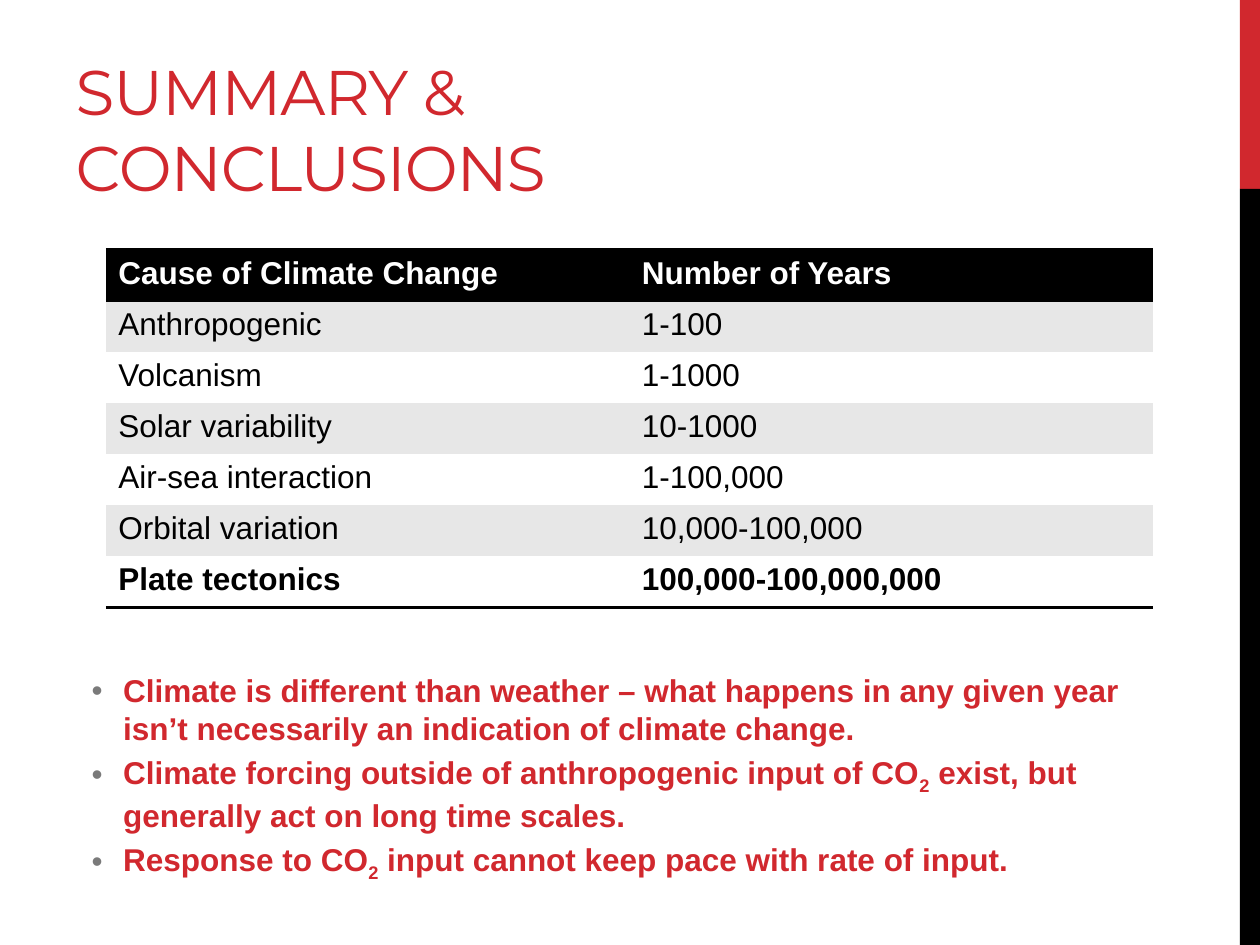
"""Build the summary slide on causes of climate change."""
from lxml.etree import SubElement
from pptx import Presentation
from pptx.dml.color import RGBColor
from pptx.enum.shapes import MSO_SHAPE
from pptx.enum.text import MSO_ANCHOR, MSO_AUTO_SIZE, PP_ALIGN
from pptx.oxml import parse_xml
from pptx.oxml.ns import nsdecls, qn
from pptx.util import Inches, Pt

RED, BLACK, WHITE, BAND, GREY = "D1282E", "000000", "FFFFFF", "E7E7E7", "7A7A7A"

ROWS = [
    ("Cause of Climate Change", "Number of Years"),
    ("Anthropogenic", "1-100"),
    ("Volcanism", "1-1000"),
    ("Solar variability", "10-1000"),
    ("Air-sea interaction", "1-100,000"),
    ("Orbital variation", "10,000-100,000"),
    ("Plate tectonics", "100,000-100,000,000"),
]

BULLETS = [
    ["Climate is different than weather – what happens in any given year "
     "isn’t necessarily an indication of climate change."],
    ["Climate forcing outside of anthropogenic input of CO", "2",
     " exist, but generally act on long time scales."],
    ["Response to CO", "2", " input cannot keep pace with rate of input."],
]


def rgb(value):
    return RGBColor.from_string(value)


def box(*lengths):
    return [Inches(length) for length in lengths]


def add_text(p, text, size=18, font="Arial", color=BLACK, bold=False,
             baseline=0, spacing=0):
    r = p.add_run()
    r.text = text
    r.font.size, r.font.name, r.font.bold = Pt(size), font, bold
    r.font.color.rgb = rgb(color)
    rPr = r._r.get_or_add_rPr()
    if baseline:
        rPr.set("baseline", str(baseline * 1000))
    if spacing:
        rPr.set("spc", str(round(spacing * 100)))


def set_borders(cell, sides):
    tcPr = cell._tc.get_or_add_tcPr()
    for i, side in enumerate("LRTB"):
        fill = "<a:noFill/>"
        if side in sides:
            fill = f'<a:solidFill><a:srgbClr val="{BLACK}"/></a:solidFill>'
        tcPr.insert(i, parse_xml(
            f'<a:ln{side} {nsdecls("a")} w="{Pt(2)}">{fill}</a:ln{side}>'))


class SlideBuilder:
    def __init__(self, prs):
        self.s = prs.slides.add_slide(prs.slide_layouts[5])
        self.s.background.fill.solid()
        self.s.background.fill.fore_color.rgb = rgb(WHITE)

    def bar(self, left, top, width, height, color):
        sp = self.s.shapes.add_shape(
            MSO_SHAPE.RECTANGLE, *box(left, top, width, height))
        sp.shadow.inherit = False
        sp.fill.solid()
        sp.fill.fore_color.rgb = rgb(color)
        sp.line.fill.background()

    def title(self, text, left, top, width, height):
        sp = self.s.shapes.title
        sp.left, sp.top, sp.width, sp.height = box(left, top, width, height)
        tf = sp.text_frame
        tf.word_wrap = True
        tf.auto_size = MSO_AUTO_SIZE.NONE
        tf.vertical_anchor = MSO_ANCHOR.BOTTOM
        p = tf.paragraphs[0]
        p.alignment = PP_ALIGN.LEFT
        add_text(p, text, size=36, font="Montserrat", color=RED, spacing=-0.6)

    def table(self, rows, left, top, width, height):
        table = self.s.shapes.add_table(
            len(rows), len(rows[0]), *box(left, top, width, height)).table
        last = len(rows) - 1
        for i, row in enumerate(rows):
            header = i == 0
            fill = BLACK if header else BAND if i % 2 else WHITE
            sides = "TB" if header else "T" if i == 1 else "B" if i == last else ""
            for j, text in enumerate(row):
                cell = table.cell(i, j)
                cell.fill.solid()
                cell.fill.fore_color.rgb = rgb(fill)
                set_borders(cell, sides)
                add_text(cell.text_frame.paragraphs[0], text,
                         color=WHITE if header else BLACK,
                         bold=i in (0, last))

    def bullets(self, items, left, top, width, height):
        tf = self.s.shapes.add_textbox(
            *box(left, top, width, height)).text_frame
        tf.word_wrap = True
        for i, parts in enumerate(items):
            p = tf.add_paragraph() if i else tf.paragraphs[0]
            p.space_before = Pt(3.6)
            pPr = p._p.get_or_add_pPr()
            pPr.set("marL", str(Inches(0.38)))
            pPr.set("indent", str(Inches(-0.25)))
            SubElement(SubElement(pPr, qn("a:buClr")),
                       qn("a:srgbClr")).set("val", GREY)
            SubElement(pPr, qn("a:buFont")).set("typeface", "Arial")
            SubElement(pPr, qn("a:buChar")).set("char", "•")
            for part in parts:
                add_text(p, part, color=RED, bold=True,
                         baseline=-25 if part == "2" else 0)


def main():
    prs = Presentation()
    prs.slide_width, prs.slide_height = box(10, 7.5)
    slide = SlideBuilder(prs)
    slide.bar(9.84, 0, 0.16, 1.5, RED)
    slide.bar(9.84, 1.5, 0.16, 6, BLACK)
    slide.title("SUMMARY & CONCLUSIONS", 0.5, 0.17, 6.33, 1.5)
    slide.bullets(BULLETS, 0.5, 5.28, 9, 2.01)
    slide.table(ROWS, 0.84, 1.98, 8.31, 2.84)
    prs.save("out.pptx")


if __name__ == "__main__":
    main()
